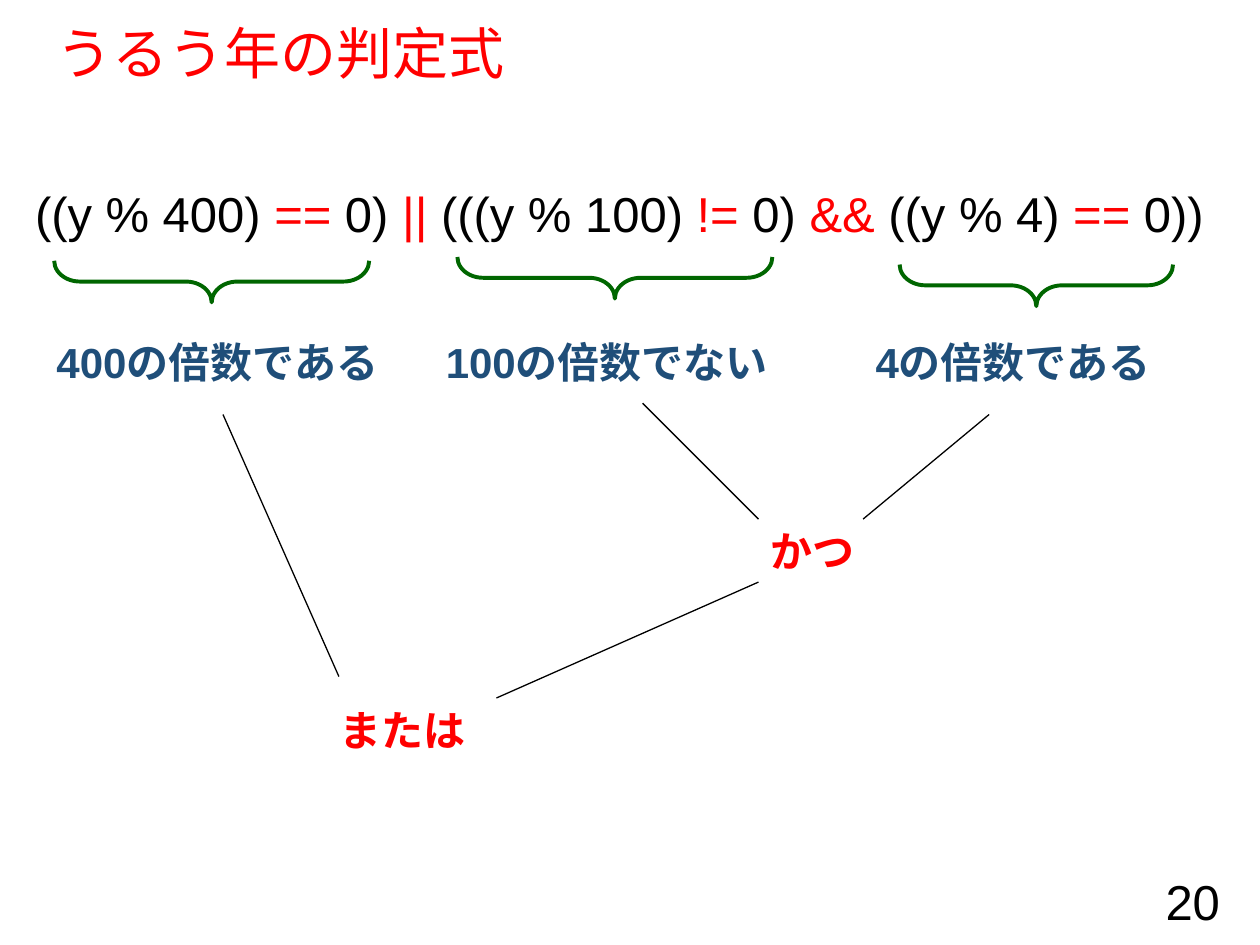
from dataclasses import dataclass

import pptx
import pptx.dml.color
import pptx.enum.shapes
import pptx.enum.text
import pptx.oxml
import pptx.oxml.ns
import pptx.util
from pptx.util import Inches

ALIGN = pptx.enum.text.PP_ALIGN
ANCHOR = pptx.enum.text.MSO_ANCHOR


@dataclass(frozen=True)
class Theme:
    font: str = "Arial"
    black: str = "000000"
    red: str = "FF0000"
    green: str = "006600"
    navy: str = "1F4E79"
    title_size: int = 32
    formula_size: int = 28
    label_size: int = 24
    brace_width: float = 2.25
    line_width: float = 0.75


def rgb(value):
    return pptx.dml.color.RGBColor.from_string(value)


class SlideBuilder:
    def __init__(self, slide, theme):
        self.slide = slide
        self.theme = theme

    def text(self, left, top, width, height, runs, size, bold=False, wrap=True,
             anchor=ANCHOR.TOP, align=ALIGN.LEFT, line_spacing=1.0):
        """Add a one-paragraph text box; runs are (wording, colour) pairs."""
        shape = self.slide.shapes.add_textbox(
            Inches(left), Inches(top), Inches(width), Inches(height))
        frame = shape.text_frame
        frame.word_wrap = wrap
        frame.vertical_anchor = anchor
        paragraph = frame.paragraphs[0]
        paragraph.alignment = align
        paragraph.line_spacing = line_spacing
        for wording, color in runs:
            run = paragraph.add_run()
            run.text = wording
            run.font.name = self.theme.font
            run.font.size = pptx.util.Pt(size)
            run.font.bold = bold
            run.font.color.rgb = rgb(color)

    def label(self, left, top, width, wording, color):
        self.text(left, top, width, 0.6, [(wording, color)],
                  self.theme.label_size, bold=True, wrap=False)

    def brace(self, left, top, length, depth):
        """Add a brace that spans length and points down."""
        shape = self.slide.shapes.add_shape(
            pptx.enum.shapes.MSO_SHAPE.RIGHT_BRACE,
            Inches(left + (length - depth) / 2),
            Inches(top + (depth - length) / 2),
            Inches(depth), Inches(length))
        shape.rotation = 90
        shape.adjustments[0] = 0.62
        shape.adjustments[1] = 0.5
        shape.shadow.inherit = False
        shape.fill.background()
        shape.line.color.rgb = rgb(self.theme.green)
        shape.line.width = pptx.util.Pt(self.theme.brace_width)

    def line(self, start, end):
        connector = self.slide.shapes.add_connector(
            pptx.enum.shapes.MSO_CONNECTOR.STRAIGHT,
            *(Inches(value) for value in (*start, *end)))
        connector.line.color.rgb = rgb(self.theme.black)
        connector.line.width = pptx.util.Pt(self.theme.line_width)
        properties = connector.element.spPr
        properties.append(pptx.oxml.parse_xml(
            f"<a:effectLst {pptx.oxml.ns.nsdecls('a')}/>"))


def main():
    theme = Theme()
    presentation = pptx.Presentation()
    presentation.slide_width = Inches(10)
    presentation.slide_height = Inches(7.5)
    slide = presentation.slides.add_slide(presentation.slide_layouts[6])
    builder = SlideBuilder(slide, theme)

    builder.text(0.35, 0.19, 9.25, 0.51, [("うるう年の判定式", theme.red)],
                 theme.title_size, anchor=ANCHOR.MIDDLE, line_spacing=0.9)

    formula = ["((y % 400) ", "==", " 0) ", "||", " (((y % 100) ", "!=",
               " 0) ", "&&", " ((y % 4) ", "==", " 0))"]
    runs = [(part, theme.red if index % 2 else theme.black)
            for index, part in enumerate(formula)]
    builder.text(0.18, 1.41, 9.67, 5.41, runs, theme.formula_size)
    builder.text(7.53, 6.95, 2.25, 0.4, [("20", theme.black)],
                 theme.formula_size, anchor=ANCHOR.MIDDLE, align=ALIGN.RIGHT)

    for left, top, length in [(0.43, 2.07, 2.5), (3.63, 2.04, 2.5), (7.14, 2.1, 2.17)]:
        builder.brace(left, top, length, 0.33)

    for left, width, wording in [(0.35, 2.9, "400の倍数である"),
                                 (3.44, 2.9, "100の倍数でない"),
                                 (6.85, 2.55, "4の倍数である")]:
        builder.label(left, 2.62, width, wording, theme.navy)
    builder.label(6.02, 4.12, 0.95, "かつ", theme.red)
    builder.label(2.6, 5.54, 1.3, "または", theme.red)

    for start, end in [((5.1, 3.2), (6.02, 4.12)),
                       ((7.85, 3.29), (6.85, 4.12)),
                       ((1.77, 3.29), (2.69, 5.37)),
                       ((6.02, 4.62), (3.94, 5.54))]:
        builder.line(start, end)

    presentation.save("out.pptx")


if __name__ == "__main__":
    main()
